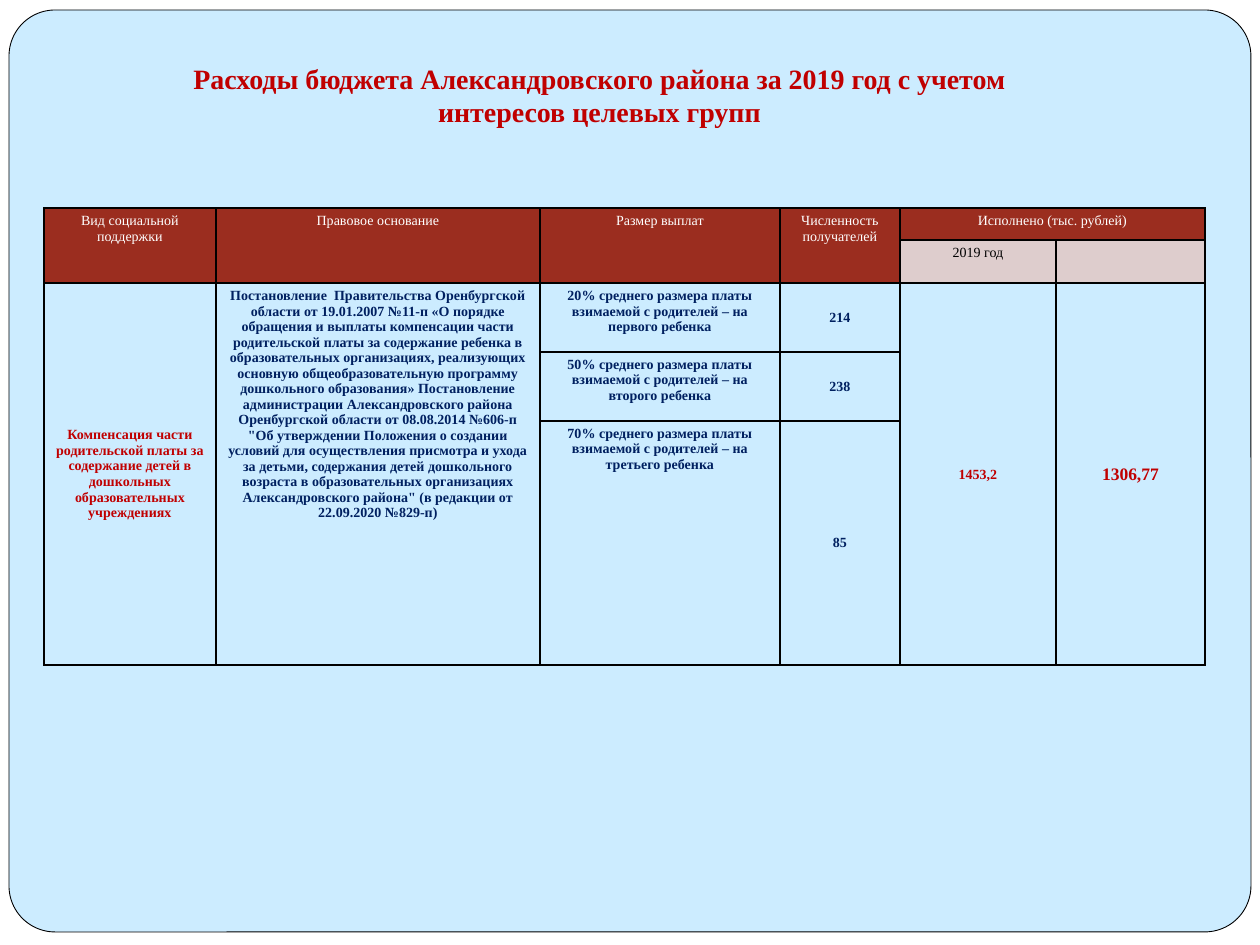
from dataclasses import dataclass

from lxml.etree import SubElement
from pptx import Presentation
from pptx.dml.color import RGBColor
from pptx.enum.shapes import MSO_SHAPE
from pptx.enum.text import MSO_ANCHOR, PP_ALIGN
from pptx.oxml.ns import qn
from pptx.util import Emu, Pt

PX = 914400 // 126
FONT = "Times New Roman"
COLORS = {
    "white": "FFFFFF", "black": "000000", "sky": "CCECFF", "red": "C00000",
    "navy": "002060", "brick": "9B2D1F", "rose": "DECDCD",
}
TEXT_INSETS = (9, 5, 9, 5)
TIGHT_INSETS = (1, 1, 1, 0)

TITLE = "Расходы бюджета Александровского района за 2019 год с учетом интересов целевых групп"
HEADINGS = ["Вид социальной поддержки", "Правовое основание", "Размер выплат",
            "Численность получателей", "Исполнено (тыс. рублей)"]
SUPPORT = ("Компенсация части родительской платы за содержание детей в дошкольных "
           "образовательных учреждениях")
LEGAL_BASIS = (
    "Постановление  Правительства Оренбургской области от 19.01.2007 №11-п «О порядке "
    "обращения и выплаты компенсации части родительской платы за содержание ребенка в "
    "образовательных организациях, реализующих основную общеобразовательную программу "
    "дошкольного образования» Постановление администрации Александровского района "
    "Оренбургской области от 08.08.2014 №606-п \"Об утверждении Положения о создании "
    "условий для осуществления присмотра и ухода за детьми, содержания детей дошкольного "
    "возраста в образовательных организациях Александровского района\" (в редакции от "
    "22.09.2020 №829-п)"
)
PAYMENTS = [("20%", "первого", "214"), ("50%", "второго", "238"), ("70%", "третьего", "85")]
COLUMN_WIDTHS = [172, 324, 240, 120, 156, 149]
ROW_HEIGHTS = [32, 43, 69, 69, 244]


def px(length):
    return Emu(length * PX)


def rgb(color):
    return RGBColor.from_string(COLORS[color])


@dataclass
class CellStyle:
    color: str = "navy"
    fill: str = ""
    size: int = 8
    bold: bool = True
    anchor: MSO_ANCHOR = MSO_ANCHOR.TOP
    insets: tuple = TEXT_INSETS


class SlideBuilder:
    def __init__(self, slide):
        self.slide = slide

    def background(self, color):
        fill = self.slide.background.fill
        fill.solid()
        fill.fore_color.rgb = rgb(color)

    def panel(self, left, top, width, height):
        """Draw the rounded panel behind everything else."""
        panel = self.slide.shapes.add_shape(
            MSO_SHAPE.ROUNDED_RECTANGLE, px(left), px(top), px(width), px(height))
        panel.adjustments[0] = 0.05
        panel.shadow.inherit = False
        panel.fill.solid()
        panel.fill.fore_color.rgb = rgb("sky")
        panel.line.color.rgb = rgb("black")
        panel.line.width = Pt(0.5)
        self.slide.shapes._spTree.insert(2, panel._element)

    def set_text(self, frame, text, size, color, bold):
        frame.text = text
        frame.word_wrap = True
        paragraph = frame.paragraphs[0]
        paragraph.alignment = PP_ALIGN.CENTER
        font = paragraph.font
        font.name, font.size, font.bold = FONT, Pt(size), bold
        font.color.rgb = rgb(color)

    def title(self, text, left, top, width, height):
        title = self.slide.shapes.title
        title.left, title.top = px(left), px(top)
        title.width, title.height = px(width), px(height)
        self.set_text(title.text_frame, text, 16, "red", True)
        title.text_frame.vertical_anchor = MSO_ANCHOR.TOP

    def table(self, left, top, widths, heights):
        table = self.slide.shapes.add_table(
            len(heights), len(widths), px(left), px(top),
            px(sum(widths)), px(sum(heights))).table
        table.first_row = table.horz_banding = False
        for column, width in zip(table.columns, widths):
            column.width = px(width)
        for row, height in zip(table.rows, heights):
            row.height = px(height)
        for cell in table.iter_cells():
            self.borders(cell)
            cell.fill.background()
        return table

    def borders(self, cell):
        properties = cell._tc.get_or_add_tcPr()
        for side in ("a:lnL", "a:lnR", "a:lnT", "a:lnB"):
            line = SubElement(properties, qn(side), w=str(Pt(1)))
            fill = SubElement(line, qn("a:solidFill"))
            SubElement(fill, qn("a:srgbClr"), val=COLORS["black"])

    def cell(self, table, row, column, text, style, rows=1, columns=1):
        """Fill a cell, merged over the given number of rows and columns."""
        cell = table.cell(row, column)
        if rows * columns > 1:
            cell.merge(table.cell(row + rows - 1, column + columns - 1))
        if style.fill:
            cell.fill.solid()
            cell.fill.fore_color.rgb = rgb(style.fill)
        cell.vertical_anchor = style.anchor
        (cell.margin_left, cell.margin_top,
         cell.margin_right, cell.margin_bottom) = map(px, style.insets)
        self.set_text(cell.text_frame, text, style.size, style.color, style.bold)


def main():
    presentation = Presentation()
    presentation.slide_width, presentation.slide_height = px(1260), px(945)
    builder = SlideBuilder(presentation.slides.add_slide(presentation.slide_layouts[5]))
    builder.background("white")
    builder.panel(9, 10, 1242, 922)
    builder.title(TITLE, 144, 55, 911, 81)

    middle = MSO_ANCHOR.MIDDLE
    heading = CellStyle("white", "brick", bold=False)
    body, count = CellStyle(), CellStyle(anchor=middle)

    table = builder.table(44, 208, COLUMN_WIDTHS, ROW_HEIGHTS)
    for column, text in enumerate(HEADINGS[:-1]):
        builder.cell(table, 0, column, text, heading, rows=2)
    builder.cell(table, 0, 4, HEADINGS[-1], heading, columns=2)
    builder.cell(table, 1, 4, "2019 год", CellStyle("black", "rose", bold=False))
    builder.cell(table, 1, 5, "", CellStyle("black", "rose", insets=TIGHT_INSETS))

    builder.cell(table, 2, 0, SUPPORT, CellStyle("red", anchor=middle), rows=3)
    builder.cell(table, 2, 1, LEGAL_BASIS, body, rows=3)
    for row, (share, child, recipients) in enumerate(PAYMENTS, start=2):
        payment = f"{share} среднего размера платы взимаемой с родителей – на {child} ребенка"
        builder.cell(table, row, 2, payment, body)
        builder.cell(table, row, 3, recipients, count)
    for column, (amount, size) in enumerate([("1453,2", 8), ("1306,77", 10)], start=4):
        style = CellStyle("red", size=size, anchor=middle, insets=TIGHT_INSETS)
        builder.cell(table, 2, column, amount, style, rows=3)

    presentation.save("out.pptx")


if __name__ == "__main__":
    main()
